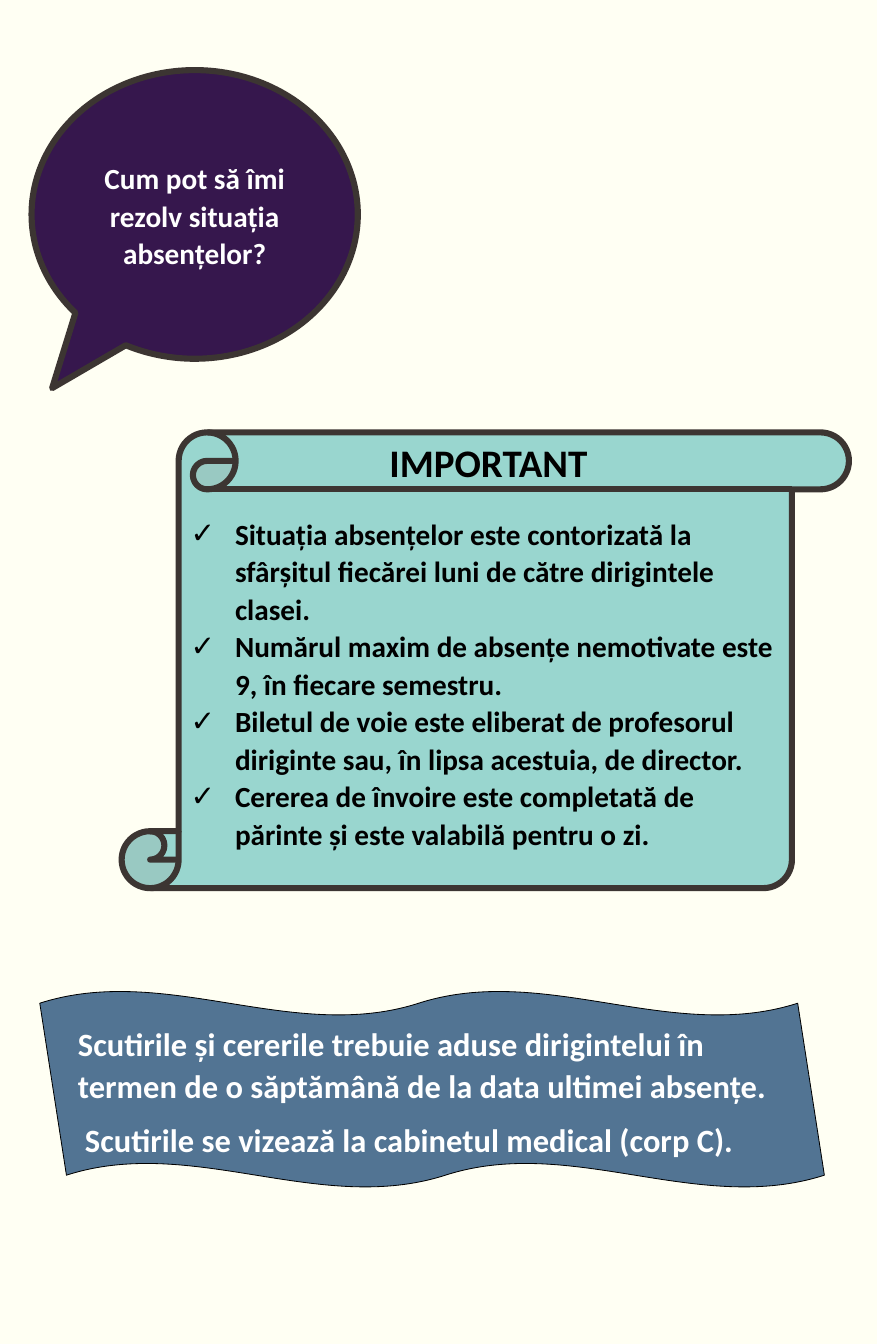
import pptx
import pptx.util
import pptx.dml.color
import pptx.enum.shapes
import pptx.enum.text
import pptx.oxml.ns
import lxml.etree

PX = 9144  # EMU in one px, 100 px to the inch
COLOURS = {
    "paper": "FFFFF3",
    "plum": "36174D",
    "teal": "009999",
    "navy": "003366",
    "outline": "3C3532",
    "black": "000000",
    "white": "FFFFFF",
}
SHAPES = pptx.enum.shapes.MSO_SHAPE
ALIGN = pptx.enum.text.PP_ALIGN
ANCHOR = pptx.enum.text.MSO_ANCHOR
qn = pptx.oxml.ns.qn


def rgb(name):
    return pptx.dml.color.RGBColor.from_string(COLOURS[name])


def write(holder, lines, size, colour, anchor, wrap=True, **paragraph_format):
    frame = holder.text_frame
    frame.text = "\n".join(lines)
    frame_format = {
        "word_wrap": wrap,
        "auto_size": pptx.enum.text.MSO_AUTO_SIZE.NONE,
        "vertical_anchor": anchor,
    }
    for key, value in frame_format.items():
        setattr(frame, key, value)
    font_format = {"name": "Calibri", "size": pptx.util.Pt(size), "bold": True}
    for paragraph in frame.paragraphs:
        for key, value in paragraph_format.items():
            setattr(paragraph, key, value)
        for run in paragraph.runs:
            for key, value in font_format.items():
                setattr(run.font, key, value)
            run.font.color.rgb = rgb(colour)
    return frame.paragraphs


# Slide and background
deck = pptx.Presentation()
deck.slide_width, deck.slide_height = 750 * PX, 1150 * PX
slide = deck.slides.add_slide(deck.slide_layouts[1])
slide.background.fill.solid()
slide.background.fill.fore_color.rgb = rgb("paper")

# Speech bubble, scroll and wave: preset, box, adjustments, fill, opacity %, line
panels = [
    (SHAPES.OVAL_CALLOUT, (27, 60, 279, 247), (-0.437, 0.602), "plum", 100, "outline", 3.78),
    (SHAPES.VERTICAL_SCROLL, (104, 370, 622, 390), (), "teal", 40, "outline", 3.78),
    (SHAPES.DOUBLE_WAVE, (34, 848, 671, 168), (0.062, 0.017), "navy", 68, "black", 0.5),
]
drawn = []
for preset, box, adjustments, fill, opacity, line, weight in panels:
    panel = slide.shapes.add_shape(preset, *(n * PX for n in box))
    panel.shadow.inherit = False
    for i, value in enumerate(adjustments):
        panel.adjustments[i] = value
    panel.fill.solid()
    panel.fill.fore_color.rgb = rgb(fill)
    panel.line.color.rgb = rgb(line)
    panel.line.width = pptx.util.Pt(weight)
    if opacity < 100:
        tint = panel._element.spPr.find(qn("a:solidFill")).find(qn("a:srgbClr"))
        lxml.etree.SubElement(tint, qn("a:alpha"), val=str(opacity * 1000))
    drawn.append(panel)
question, scroll, deadline = drawn

# Question in the speech bubble
write(question, ["Cum pot să îmi rezolv situația absențelor?"], 18, "white", ANCHOR.MIDDLE,
      alignment=ALIGN.CENTER, line_spacing=1.07, space_after=pptx.util.Pt(8))

# Heading and rules lie in front of the scroll
heading, rules = slide.shapes.title, slide.placeholders[1]
for holder, box in ((heading, (323, 370, 199, 50)), (rules, (153, 419, 524, 330))):
    holder.left, holder.top, holder.width, holder.height = (n * PX for n in box)
    slide.shapes._spTree.append(holder._element)

write(heading, ["IMPORTANT"], 24, "black", ANCHOR.TOP, wrap=False, alignment=ALIGN.LEFT)

# Checked list of rules
rule_lines = [
    "Situația absențelor este contorizată la sfârșitul fiecărei luni de către dirigintele clasei.",
    "Numărul maxim de absențe nemotivate este 9, în fiecare semestru.",
    "Biletul de voie este eliberat de profesorul diriginte sau, în lipsa acestuia, de director.",
    "Cererea de învoire este completată de părinte și este valabilă pentru o zi.",
]
for rule in write(rules, rule_lines, 18, "black", ANCHOR.MIDDLE, alignment=ALIGN.LEFT,
                  line_spacing=1.07, space_before=pptx.util.Pt(0)):
    properties = rule._p.get_or_add_pPr()
    properties.set("marL", str(38 * PX))
    properties.set("indent", str(-38 * PX))
    lxml.etree.SubElement(properties, qn("a:buChar"), char="✓")

# Deadline in the wave
deadline_lines = [
    "Scutirile și cererile trebuie aduse dirigintelui în termen de o săptămână de la data ultimei absențe.",
    "Scutirile se vizează la cabinetul medical (corp C).",
]
notices = write(deadline, deadline_lines, 20, "white", ANCHOR.TOP, alignment=ALIGN.LEFT,
                line_spacing=1.07, space_after=pptx.util.Pt(8))
notices[1]._p.get_or_add_pPr().set("indent", str(6 * PX))

deck.save("out.pptx")
